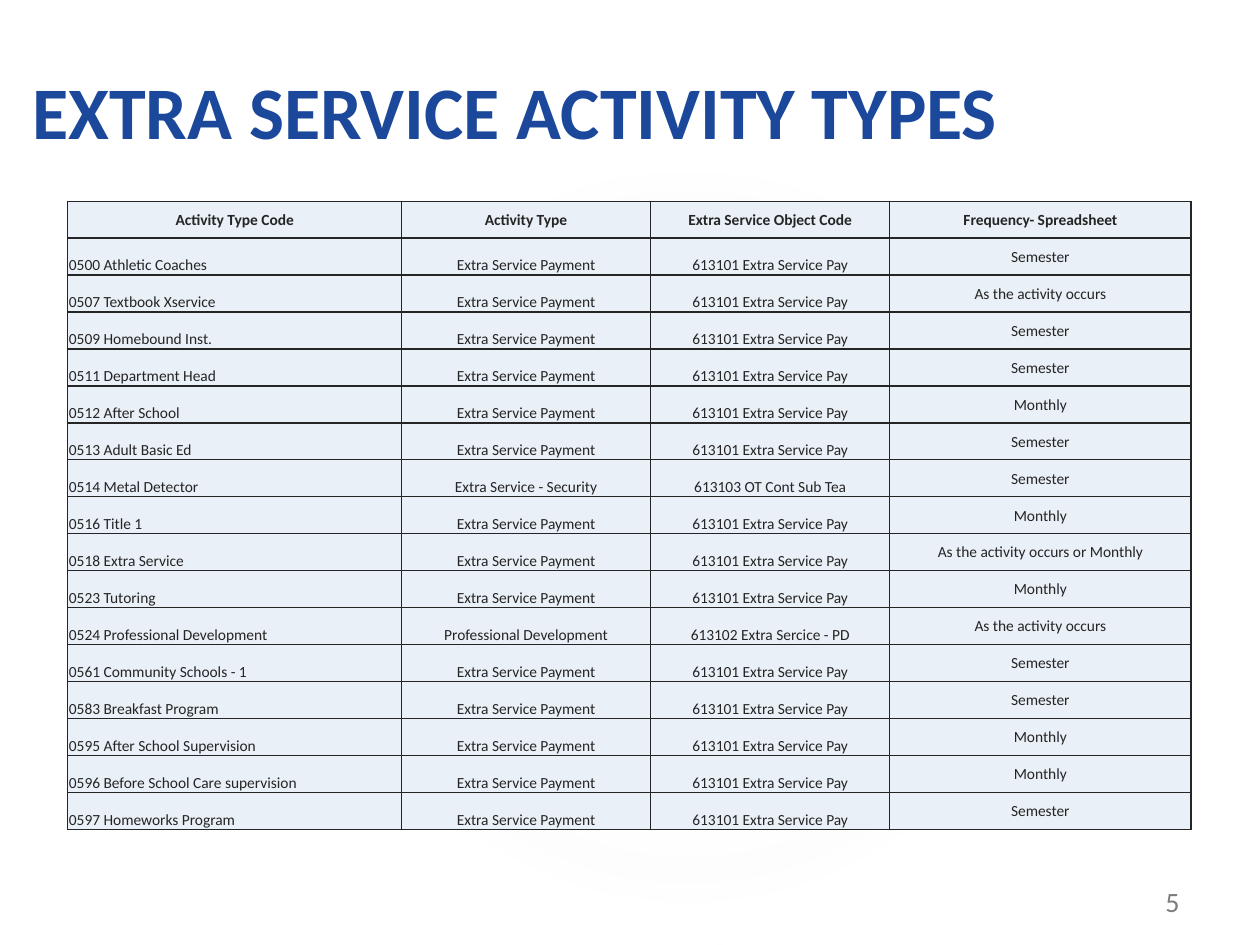
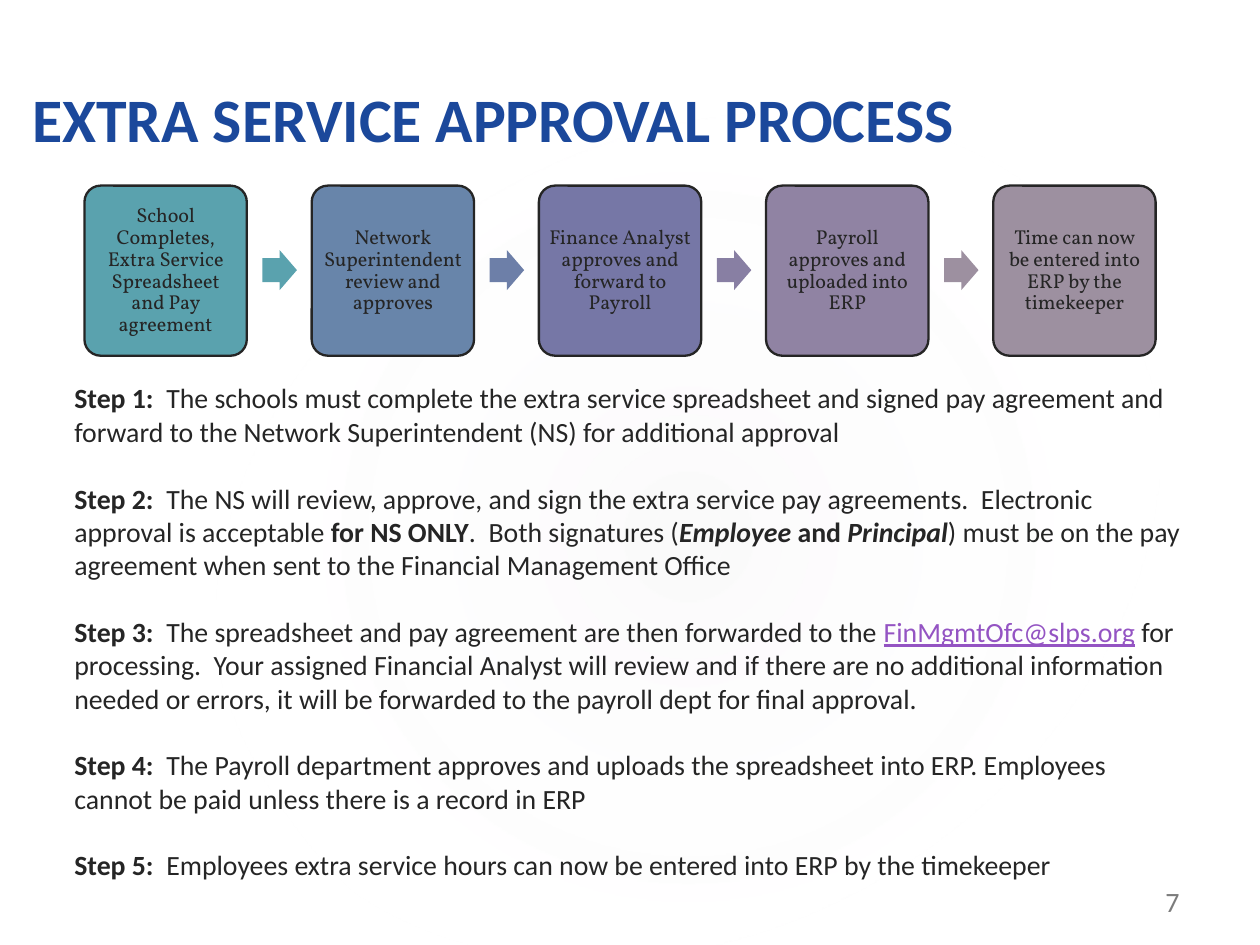
from dataclasses import dataclass
from typing import NamedTuple

from pptx import Presentation
from pptx import util as u
from pptx.dml.color import RGBColor
from pptx.enum import shapes, text
from pptx.oxml import parse_xml
from pptx.oxml.ns import nsdecls, qn

CELL = u.Inches(0.1)  # side of one square of the slide grid
SLIDE_COLUMNS, SLIDE_ROWS = 113.3, 85


@dataclass(frozen=True)
class Theme:
    ink: str = "252525"
    title: str = "1B489B"
    link: str = "9454C3"
    cell: str = "EAF0F7"
    halo: str = "C4BCC6"
    paper: str = "FFFFFF"
    font: str = "Calibri"
    stage_font: str = "Vollkorn"
    table_size: float = 10
    stage_size: float = 13
    body_size: float = 18
    number_size: float = 18.1
    step_gap: float = 21.6


THEME = Theme()


class Box(NamedTuple):
    """Left, top, width and height in grid cells."""
    left: float
    top: float
    width: float
    height: float

    def emu(self) -> tuple:
        return tuple(grid(length) for length in self)


class Span(NamedTuple):
    words: str
    bold: bool = False
    italic: bool = False
    link: bool = False


class Activity(NamedTuple):
    code: str
    frequency: str
    kind: str = "Extra Service Payment"
    object_code: str = "613101 Extra Service Pay"


class Stage(NamedTuple):
    label: str
    color: str
    arrow_color: str = ""


HALO = Box(17, 12.9, 89.7, 70.7)
TITLE = Box(2.3, 5, 92.9, 9)
NUMBER = Box(103.8, 78.9, 5.2, 3.8)
TABLE = Box(6.1, 18.1, 101, 56.5)
STEPS = Box(5.7, 33.8, 101.9, 49.6)
STAGE = Box(7.6, 16.7, 14.6, 15.3)
ARROW = Box(23.6, 22.5, 3.1, 3.6)
STAGE_PITCH = 20.43

COLUMNS = (30, 22.4, 21.5, 27.1)
HEADINGS = ("Activity Type Code", "Activity Type",
            "Extra Service Object Code", "Frequency- Spreadsheet")
ACTIVITIES = (
    Activity("0500 Athletic Coaches", "Semester"),
    Activity("0507 Textbook Xservice", "As the activity occurs"),
    Activity("0509 Homebound Inst.", "Semester"),
    Activity("0511 Department Head", "Semester"),
    Activity("0512 After School", "Monthly"),
    Activity("0513 Adult Basic Ed", "Semester"),
    Activity("0514 Metal Detector", "Semester",
             "Extra Service - Security", "613103 OT Cont Sub Tea"),
    Activity("0516 Title 1", "Monthly"),
    Activity("0518 Extra Service", "As the activity occurs or Monthly"),
    Activity("0523 Tutoring", "Monthly"),
    Activity("0524 Professional Development", "As the activity occurs",
             "Professional Development", "613102 Extra Sercice - PD"),
    Activity("0561 Community Schools - 1", "Semester"),
    Activity("0583 Breakfast Program", "Semester"),
    Activity("0595 After School Supervision", "Monthly"),
    Activity("0596 Before School Care supervision", "Monthly"),
    Activity("0597 Homeworks Program", "Semester"),
)

STAGES = (
    Stage("School Completes, Extra Service Spreadsheet and Pay agreement",
          "5AA2AE", "5AA2AE"),
    Stage("Network Superintendent review and approves", "6885AA", "6D7FA8"),
    Stage("Finance Analyst approves and forward to Payroll", "7677A6", "887FA3"),
    Stage("Payroll approves and uploaded into ERP", "9083A3", "9D90A0"),
    Stage("Time can now be entered into ERP by the timekeeper", "9D90A0"),
)

STEP_SPANS = (
    (Span("Step 1:", bold=True),
     Span("  The schools must complete the extra service spreadsheet and signed pay "
          "agreement and forward to the Network Superintendent (NS) for additional approval")),
    (Span("Step 2:", bold=True),
     Span("  The NS will review, approve, and sign the extra service pay agreements.  "
          "Electronic approval is acceptable "),
     Span("for NS ONLY", bold=True),
     Span(".  Both signatures ("),
     Span("Employee ", bold=True, italic=True),
     Span("and ", bold=True),
     Span("Principal", bold=True, italic=True),
     Span(") must be on the pay agreement when sent to the Financial Management Office")),
    (Span("Step 3:", bold=True),
     Span("  The spreadsheet and pay agreement are then forwarded to the "),
     Span("FinMgmtOfc@slps.org", link=True),
     Span(" for  processing.  Your assigned Financial Analyst will review and if there are "
          "no additional information needed or errors, it will be forwarded to the payroll "
          "dept for final approval.")),
    (Span("Step 4:  ", bold=True),
     Span("The Payroll department approves and uploads the spreadsheet into ERP. "
          "Employees cannot be paid unless there is a record in ERP")),
    (Span("Step 5:", bold=True),
     Span("  Employees extra service hours can now be entered into ERP by the timekeeper")),
)


def grid(cells: float) -> int:
    return round(cells * CELL)


def style(font, size: float, color: str = THEME.ink, bold: bool = False,
          name: str = THEME.font) -> None:
    font.name, font.size, font.bold = name, u.Pt(size), bold
    font.color.rgb = RGBColor.from_string(color)


def set_margins(holder, left: float, top: float, right: float, bottom: float) -> None:
    """Set the inner margins of a text frame or table cell, in grid cells."""
    holder.margin_left, holder.margin_top = grid(left), grid(top)
    holder.margin_right, holder.margin_bottom = grid(right), grid(bottom)


def add_shape(slide, kind, box: Box, color: str = ""):
    shape = slide.shapes.add_shape(kind, *box.emu())
    shape.shadow.inherit = False
    shape.line.fill.background()
    if color:
        shape.fill.solid()
        shape.fill.fore_color.rgb = RGBColor.from_string(color)
    return shape


def add_text_frame(slide, box: Box, anchor):
    frame = slide.shapes.add_textbox(*box.emu()).text_frame
    frame.word_wrap = True
    frame.vertical_anchor = anchor
    return frame


def add_halo(slide) -> None:
    """Draw the faint tilted glow behind the content."""
    halo = add_shape(slide, shapes.MSO_SHAPE.OVAL, HALO)
    halo.rotation = 328.7
    halo.fill.background()
    stops = "".join(
        f'<a:gs pos="{place * 1000}"><a:srgbClr val="{color}">'
        f'<a:alpha val="{alpha * 1000}"/></a:srgbClr></a:gs>'
        for place, color, alpha in ((0, THEME.halo, 7), (58, THEME.paper, 0)))
    glow = parse_xml(
        f'<a:gradFill {nsdecls("a")} rotWithShape="1"><a:gsLst>{stops}</a:gsLst>'
        '<a:path path="circle"><a:fillToRect l="50000" t="50000" r="50000" b="50000"/>'
        '</a:path></a:gradFill>')
    properties = halo.element.spPr
    properties.replace(properties.find(qn("a:noFill")), glow)


def start_slide(deck, title: str, title_size: float):
    slide = deck.slides.add_slide(deck.slide_layouts[6])
    add_halo(slide)
    frame = add_text_frame(slide, TITLE, text.MSO_ANCHOR.BOTTOM)
    set_margins(frame, 0.6, 0.5, 0.6, 0.1)
    frame.text = title
    style(frame.paragraphs[0].runs[0].font, title_size, THEME.title, bold=True)
    return slide


def add_number(slide, number: int) -> None:
    frame = add_text_frame(slide, NUMBER, text.MSO_ANCHOR.BOTTOM)
    set_margins(frame, 1, 0.5, 1, 0.1)
    frame.text = str(number)
    digits = frame.paragraphs[0].runs[0]
    style(digits.font, THEME.number_size)
    color = digits.font.element.find(".//" + qn("a:srgbClr")) if hasattr(
        digits.font, "element") else digits._r.find(".//" + qn("a:srgbClr"))
    color.append(parse_xml(f'<a:alpha {nsdecls("a")} val="60000"/>'))


def add_borders(cell) -> None:
    properties = cell._tc.get_or_add_tcPr()
    for place, side in enumerate("LRTB"):
        properties.insert(place, parse_xml(
            f'<a:ln{side} {nsdecls("a")} w="{u.Pt(1)}"><a:solidFill>'
            f'<a:srgbClr val="{THEME.ink}"/></a:solidFill></a:ln{side}>'))


def fill_cell(cell, words: str, heading: bool, column: int) -> None:
    cell.text = words
    last = len(COLUMNS) - 1
    cell.vertical_anchor = (text.MSO_ANCHOR.MIDDLE if heading or column == last
                            else text.MSO_ANCHOR.BOTTOM)
    set_margins(cell, 0.1, 0.1, 0.1, 0)
    cell.fill.solid()
    cell.fill.fore_color.rgb = RGBColor.from_string(THEME.cell)
    add_borders(cell)
    paragraph = cell.text_frame.paragraphs[0]
    paragraph.alignment = (text.PP_ALIGN.CENTER if heading or column
                           else text.PP_ALIGN.LEFT)
    style(paragraph.runs[0].font, THEME.table_size, bold=heading)


def add_activity_table(slide) -> None:
    lines = [HEADINGS] + [(a.code, a.kind, a.object_code, a.frequency) for a in ACTIVITIES]
    table = slide.shapes.add_table(len(lines), len(COLUMNS), *TABLE.emu()).table
    table.first_row = table.horz_banding = False
    for column, width in zip(table.columns, COLUMNS):
        column.width = grid(width)
    for row, line in enumerate(lines):
        table.rows[row].height = grid(TABLE.height / len(lines))
        for column, words in enumerate(line):
            fill_cell(table.cell(row, column), words, row == 0, column)


def add_stage(slide, place: int, stage: Stage) -> None:
    shift = place * STAGE_PITCH
    card = add_shape(slide, shapes.MSO_SHAPE.ROUNDED_RECTANGLE,
                     STAGE._replace(left=STAGE.left + shift), stage.color)
    card.adjustments[0] = 0.1
    card.line.color.rgb = RGBColor.from_string(THEME.ink)
    card.line.width = u.Pt(1.5)
    frame = card.text_frame
    frame.word_wrap = True
    frame.vertical_anchor = text.MSO_ANCHOR.MIDDLE
    set_margins(frame, 0.5, 0.5, 0.5, 0.5)
    frame.text = stage.label
    label = frame.paragraphs[0]
    label.alignment = text.PP_ALIGN.CENTER
    label.line_spacing = 0.9
    style(label.runs[0].font, THEME.stage_size, name=THEME.stage_font)
    if stage.arrow_color:
        arrow = add_shape(slide, shapes.MSO_SHAPE.RIGHT_ARROW,
                          ARROW._replace(left=ARROW.left + shift), stage.arrow_color)
        arrow.adjustments[0] = 0.6
        arrow.adjustments[1] = 0.5


def add_steps(slide) -> None:
    frame = add_text_frame(slide, STEPS, text.MSO_ANCHOR.TOP)
    for place, spans in enumerate(STEP_SPANS):
        step = frame.add_paragraph() if place else frame.paragraphs[0]
        if place:
            step.space_before = u.Pt(THEME.step_gap)
        for span in spans:
            run = step.add_run()
            run.text = span.words
            style(run.font, THEME.body_size, THEME.link if span.link else THEME.ink, span.bold)
            run.font.italic = span.italic
            run.font.underline = span.link


def main() -> None:
    deck = Presentation()
    deck.slide_width, deck.slide_height = grid(SLIDE_COLUMNS), grid(SLIDE_ROWS)

    types = start_slide(deck, "EXTRA SERVICE ACTIVITY TYPES", 48)
    add_activity_table(types)
    add_number(types, 5)

    approval = start_slide(deck, "EXTRA SERVICE APPROVAL PROCESS", 40)
    add_steps(approval)
    for place, stage in enumerate(STAGES):
        add_stage(approval, place, stage)
    add_number(approval, 7)

    deck.save("out.pptx")


if __name__ == "__main__":
    main()
